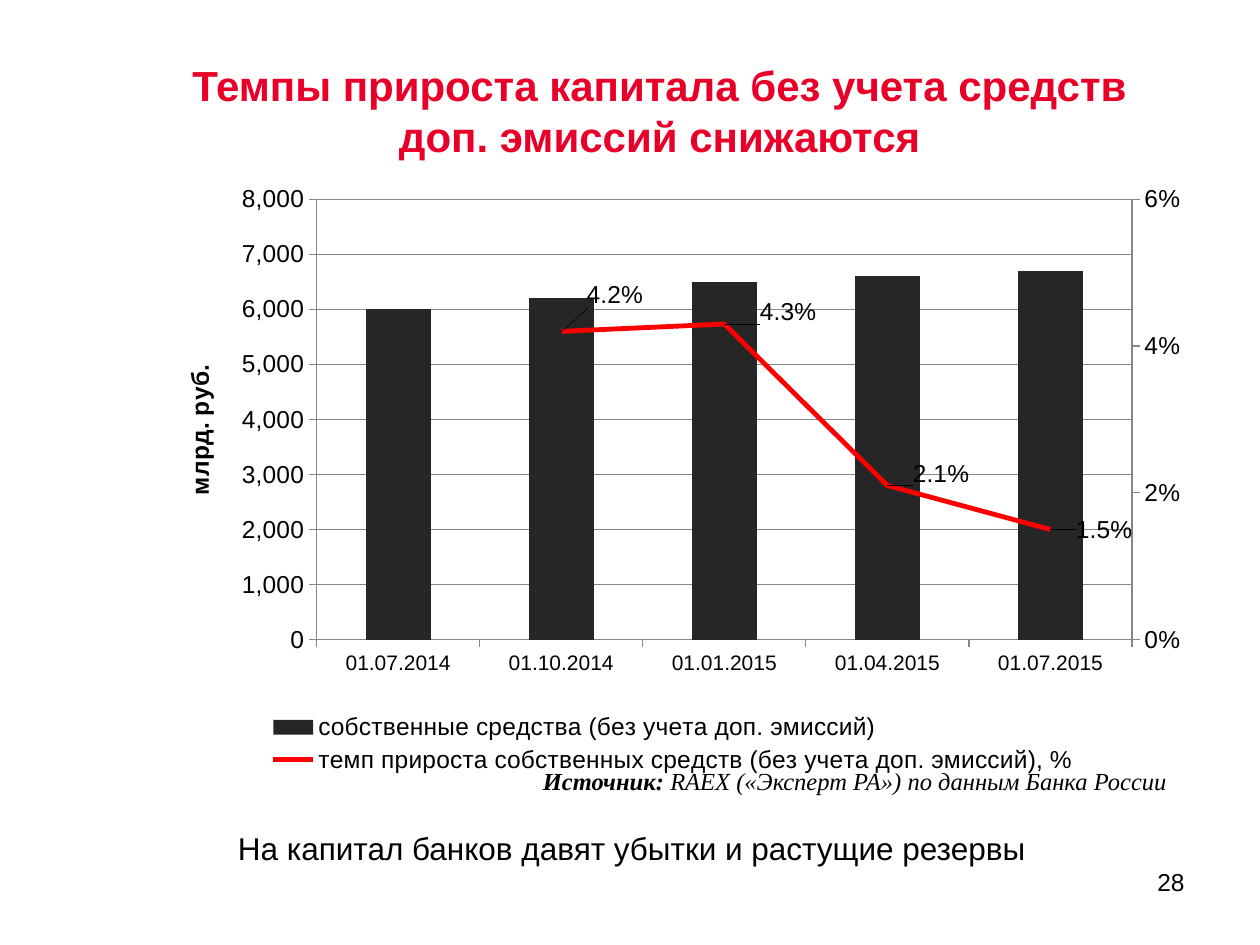
"""Builds a slide with a column and line chart of bank capital growth."""
from copy import deepcopy

from lxml import etree
from pptx import Presentation
from pptx.chart.axis import ValueAxis
from pptx.chart.data import CategoryChartData
from pptx.dml.color import RGBColor
from pptx.enum.chart import XL_CHART_TYPE, XL_LABEL_POSITION, XL_LEGEND_POSITION, XL_MARKER_STYLE, XL_TICK_MARK
from pptx.enum.text import MSO_ANCHOR, MSO_AUTO_SIZE, PP_ALIGN
from pptx.oxml import parse_xml
from pptx.oxml.ns import nsdecls, qn
from pptx.util import Inches, Pt

COLUMN = XL_CHART_TYPE.COLUMN_CLUSTERED
RIGHT = XL_LABEL_POSITION.RIGHT
BOTTOM = XL_LEGEND_POSITION.BOTTOM
PLAIN = XL_MARKER_STYLE.NONE
OUTSIDE, NO_TICK = XL_TICK_MARK.OUTSIDE, XL_TICK_MARK.NONE
MIDDLE = MSO_ANCHOR.MIDDLE
FIXED = MSO_AUTO_SIZE.NONE
CENTER, END = PP_ALIGN.CENTER, PP_ALIGN.RIGHT

BLACK = RGBColor(0x00, 0x00, 0x00)
CRIMSON = RGBColor(0xE9, 0x00, 0x29)
DARK = RGBColor(0x26, 0x26, 0x26)
RED = RGBColor(0xFF, 0x00, 0x00)
GRAY = RGBColor(0x86, 0x86, 0x86)


def style(font, size, name="Arial", color=BLACK, bold=False):
    font.size, font.name, font.bold = Pt(size), name, bold
    font.color.rgb = color


def add_text(box, parts, size, name="Arial", wrap=True):
    frame = slide.shapes.add_textbox(*map(Inches, box)).text_frame
    frame.word_wrap = wrap
    line = frame.paragraphs[0]
    style(line.font, size, name)
    for part in parts:
        line.add_run().text = part
    return line


deck = Presentation()
deck.slide_width, deck.slide_height = Inches(10), Inches(7.5)
slide = deck.slides.add_slide(deck.slide_layouts[5])

title = slide.shapes.title
title.left, title.top, title.width, title.height = map(Inches, (1.14, 0.52, 8.19, 0.71))
frame = title.text_frame
frame.text = "Темпы прироста капитала без учета средств доп. эмиссий снижаются"
frame.auto_size, frame.vertical_anchor, frame.word_wrap = FIXED, MIDDLE, True
frame.paragraphs[0].alignment = CENTER
style(frame.paragraphs[0].font, 24, color=CRIMSON, bold=True)

number = add_text((7.17, 6.83, 2.33, 0.52), ["28"], 14)
number.alignment = END

data = CategoryChartData()
data.categories = ["01.07.2014", "01.10.2014", "01.01.2015", "01.04.2015", "01.07.2015"]
data.add_series("собственные средства (без учета доп. эмиссий)",
                (6000, 6200, 6500, 6600, 6700), "#,##0")
data.add_series("темп прироста собственных средств (без учета доп. эмиссий), %",
                (None, 0.042, 0.043, 0.021, 0.015), "0.0%")
area = map(Inches, (1.3, 1.39, 8.09, 4.79))
chart = slide.shapes.add_chart(COLUMN, *area, data).chart
style(chart.font, 10)
chart.has_title = False
chart.has_legend = True
chart.legend.position = BOTTOM
chart.legend.include_in_layout = False
style(chart.legend.font, 14)

bars = chart.plots[0]
bars.gap_width, bars.vary_by_categories = 150, False
fill = bars.series[0].format.fill
fill.solid()
fill.fore_color.rgb = DARK

dates, left = chart.category_axis, chart.value_axis
for axis, size in ((dates, 12), (left, 14)):
    axis.major_tick_mark, axis.minor_tick_mark = OUTSIDE, NO_TICK
    axis.format.line.color.rgb = GRAY
    style(axis.tick_labels.font, size)
left.minimum_scale, left.maximum_scale, left.major_unit = 0, 8000, 1000
left.tick_labels.number_format = "#,##0"
left.tick_labels.number_format_is_linked = False
left.major_gridlines.format.line.color.rgb = GRAY
left.axis_title.text_frame.text = "млрд. руб."
style(left.axis_title.text_frame.paragraphs[0].font, 14, bold=True)

plot = left.axis_title._element.getparent().getparent()
columns = plot.find(qn("c:barChart"))
lines = parse_xml(f"""<c:lineChart {nsdecls("c")}><c:grouping val="standard"/>
<c:varyColors val="0"/><c:marker val="1"/><c:axId val="5001"/><c:axId val="5002"/></c:lineChart>""")
growth = columns.findall(qn("c:ser"))[1]
for flag in growth.findall(qn("c:invertIfNegative")):
    growth.remove(flag)
lines.insert(2, growth)
columns.addnext(lines)

base = plot.find(qn("c:valAx"))
hidden = parse_xml(f"""<c:catAx {nsdecls("c")}><c:axId val="5001"/>
<c:scaling><c:orientation val="minMax"/></c:scaling><c:delete val="1"/><c:axPos val="b"/>
<c:crossAx val="5002"/><c:crosses val="autoZero"/></c:catAx>""")
side = deepcopy(base)
base.addnext(hidden)
hidden.addnext(side)
for tag, value in (("axId", "5002"), ("crossAx", "5001"), ("axPos", "r"), ("crosses", "max")):
    for part in side.findall(qn("c:" + tag)):
        part.set("val", value)
right = ValueAxis(side)
right.has_title = right.has_major_gridlines = False
right.maximum_scale, right.major_unit = 0.06, 0.02
right.tick_labels.number_format = "0%"

trend = chart.plots[1].series[0]
trend.smooth = False
trend.marker.style = PLAIN
trend.format.line.color.rgb = RED
trend.format.line.width = Pt(2.75)
labels = trend.data_labels
labels.show_value, labels.position = True, RIGHT
labels.number_format, labels.number_format_is_linked = "0.0%", False
style(labels.font, 14)

group = growth.find(qn("c:dLbls"))
shared = [part for part in group if part.tag != qn("c:showLeaderLines")]
shifts = ((0.02, -0.06), (0.03, -0.02), (0.02, -0.02), (0.02, 0))
for spot, (across, down) in enumerate(shifts):
    label = etree.Element(qn("c:dLbl"))
    etree.SubElement(label, qn("c:idx")).set("val", str(spot + 1))
    layout = etree.SubElement(label, qn("c:layout"))
    manual = etree.SubElement(layout, qn("c:manualLayout"))
    for tag, value in (("x", across), ("y", down)):
        etree.SubElement(manual, qn("c:" + tag)).set("val", str(value))
    for part in shared:
        label.append(deepcopy(part))
    group.insert(spot, label)

for old in plot.findall(qn("c:layout")):
    plot.remove(old)
plot.insert(0, parse_xml(f"""<c:layout {nsdecls("c")}><c:manualLayout>
<c:layoutTarget val="inner"/><c:xMode val="edge"/><c:yMode val="edge"/>
<c:x val="0.15"/><c:y val="0.04"/><c:w val="0.8"/><c:h val="0.73"/></c:manualLayout></c:layout>"""))

source = add_text((4.21, 6.03, 7.88, 0.34),
                  ["Источник: ", "RAEX («Эксперт РА») по данным Банка России"], 14, "Times New Roman")
source.font.italic = True
source.runs[0].font.bold = True
add_text((1.79, 6.53, 6.51, 0.4), ["На капитал банков давят убытки и растущие резервы"], 18, wrap=False)

deck.save("out.pptx")
